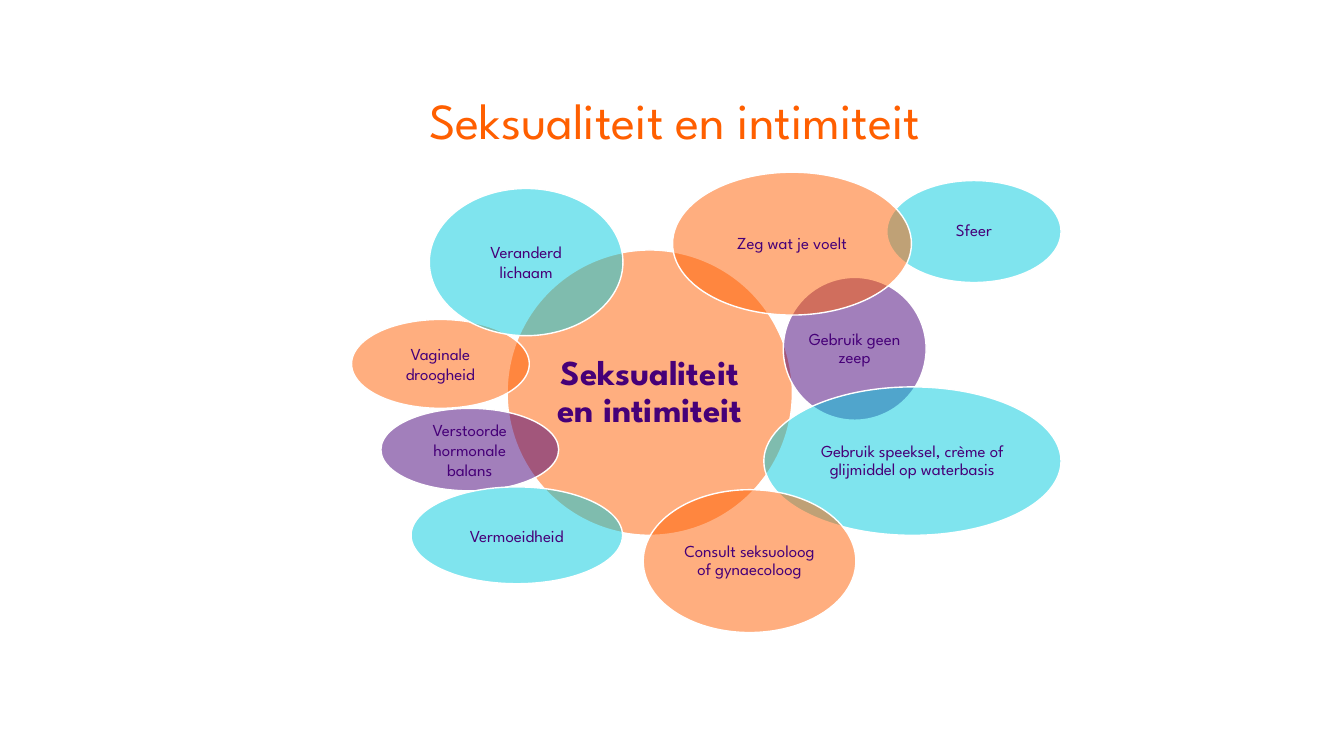
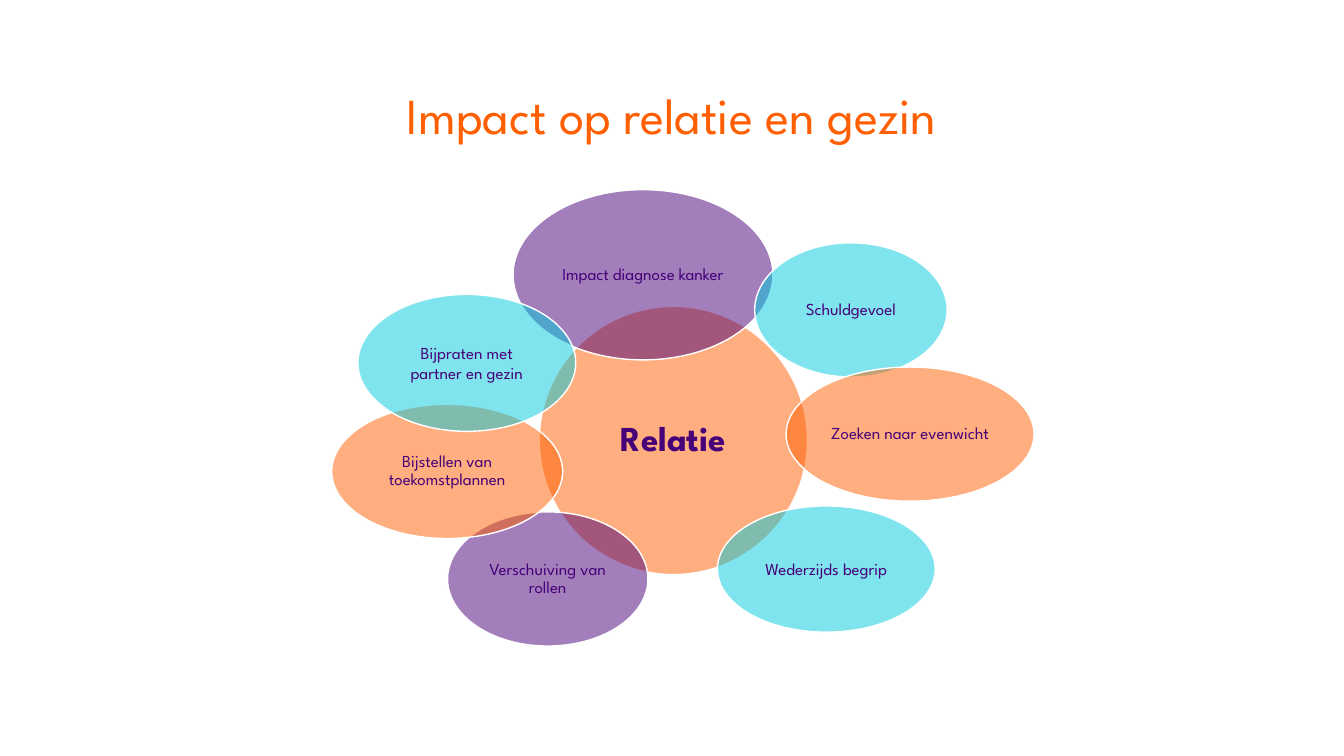
import dataclasses

import lxml.etree
import pptx
import pptx.dml.color
import pptx.enum.shapes
import pptx.enum.text
import pptx.oxml.ns
import pptx.util

Cm, Pt = pptx.util.Cm, pptx.util.Pt
RGB = pptx.dml.color.RGBColor.from_string
qn = pptx.oxml.ns.qn
Align, Anchor = pptx.enum.text.PP_ALIGN, pptx.enum.text.MSO_ANCHOR
OVAL = pptx.enum.shapes.MSO_SHAPE.OVAL


@dataclasses.dataclass(frozen=True)
class Theme:
    font: str = "League Spartan"
    orange: str = "FF5F00"
    purple: str = "460078"
    cyan: str = "00CBDE"
    white: str = "FFFFFF"
    title: int = 36
    core: int = 25
    label: int = 12
    alpha: int = 50
    tight: float = 0.9


T = Theme()
TITLE_SIZE = 26.9, 1.24

# Lengths in cm. Core and ovals: text, fill, (left, top, width, height).
# "tight" ovals have narrow margins and line spacing; "loose" ones do not.
SLIDES = [
    {
        "title": ("Seksualiteit en intimiteit", 3.56, 2.29),
        "core": ("Seksualiteit en intimiteit", T.orange, (12.78, 6.3, 7.19, 7.19)),
        "tight": [
            ("Gebruik geen zeep", T.purple, (19.74, 6.99, 3.6, 3.6)),
            ("Gebruik speeksel, crème of glijmiddel op waterbasis", T.cyan,
             (19.25, 9.75, 7.49, 3.74)),
            ("Consult seksuoloog of gynaecoloog", T.orange, (16.21, 12.34, 5.36, 3.6)),
            ("Sfeer", T.cyan, (22.35, 4.55, 4.39, 2.57)),
            ("Zeg wat je voelt", T.orange, (16.95, 4.34, 6.02, 3.6)),
        ],
        "loose": [
            ("Vaginale droogheid", T.orange, (8.86, 8.05, 4.48, 2.24)),
            ("Veranderd lichaam", T.cyan, (10.82, 4.75, 4.88, 3.71)),
            ("Verstoorde hormonale balans", T.purple, (9.6, 10.29, 4.48, 2.08)),
            ("Vermoeidheid", T.cyan, (10.36, 12.27, 5.33, 2.44)),
        ],
    },
    {
        "title": ("Impact op relatie en gezin", 3.48, 2.18),
        "core": ("Relatie", T.orange, (13.59, 7.72, 6.76, 6.76)),
        "tight": [
            ("Impact diagnose kanker", T.purple, (12.93, 4.78, 6.55, 4.29)),
            ("Schuldgevoel", T.cyan, (19.02, 6.12, 4.85, 3.38)),
            ("Zoeken naar evenwicht", T.orange, (19.81, 9.25, 6.25, 3.38)),
            ("Verschuiving van rollen", T.purple, (11.28, 12.9, 5.05, 3.38)),
            ("Bijstellen van toekomstplannen", T.orange, (8.36, 10.19, 5.82, 3.38)),
        ],
        "loose": [
            ("Bijpraten met partner en gezin", T.cyan, (9.02, 7.42, 5.49, 3.45)),
            ("Wederzijds begrip", T.cyan, (18.08, 12.75, 5.49, 3.18)),
        ],
    },
]


def write(frame, text, size, color, bold=False, tight=True):
    frame.word_wrap = True
    frame.text = text
    para = frame.paragraphs[0]
    para.alignment = Align.CENTER
    if tight:
        para.line_spacing = T.tight
    font = para.runs[0].font
    font.name, font.size, font.bold = T.font, Pt(size), bold
    font.color.rgb = RGB(color)


def add_title(slide, text, left, top):
    box = slide.shapes.add_textbox(Cm(left), Cm(top), *map(Cm, TITLE_SIZE))
    write(box.text_frame, text, T.title, T.orange)


def add_oval(slide, text, fill, place, size=T.label, bold=False, tight=True):
    oval = slide.shapes.add_shape(OVAL, *map(Cm, place))
    oval.shadow.inherit = False
    oval.fill.solid()
    oval.fill.fore_color.rgb = RGB(fill)
    tint = oval.element.spPr.find(qn("a:solidFill"))[0]
    lxml.etree.SubElement(tint, qn("a:alpha")).set("val", str(T.alpha * 1000))
    oval.line.color.rgb = RGB(T.white)
    oval.line.width = Pt(1)
    frame = oval.text_frame
    frame.vertical_anchor = Anchor.MIDDLE
    if tight:
        frame.margin_left = frame.margin_right = Cm(0.05)
        frame.margin_top = frame.margin_bottom = Cm(0.05)
    write(frame, text, size, T.purple, bold, tight)


def main():
    deck = pptx.Presentation()
    deck.slide_width, deck.slide_height = Cm(33.87), Cm(19.05)
    for page in SLIDES:
        slide = deck.slides.add_slide(deck.slide_layouts[6])
        add_title(slide, *page["title"])
        add_oval(slide, *page["core"], size=T.core, bold=True)
        for kind in ("tight", "loose"):
            for item in page[kind]:
                add_oval(slide, *item, tight=kind == "tight")
    deck.save("out.pptx")


if __name__ == "__main__":
    main()
